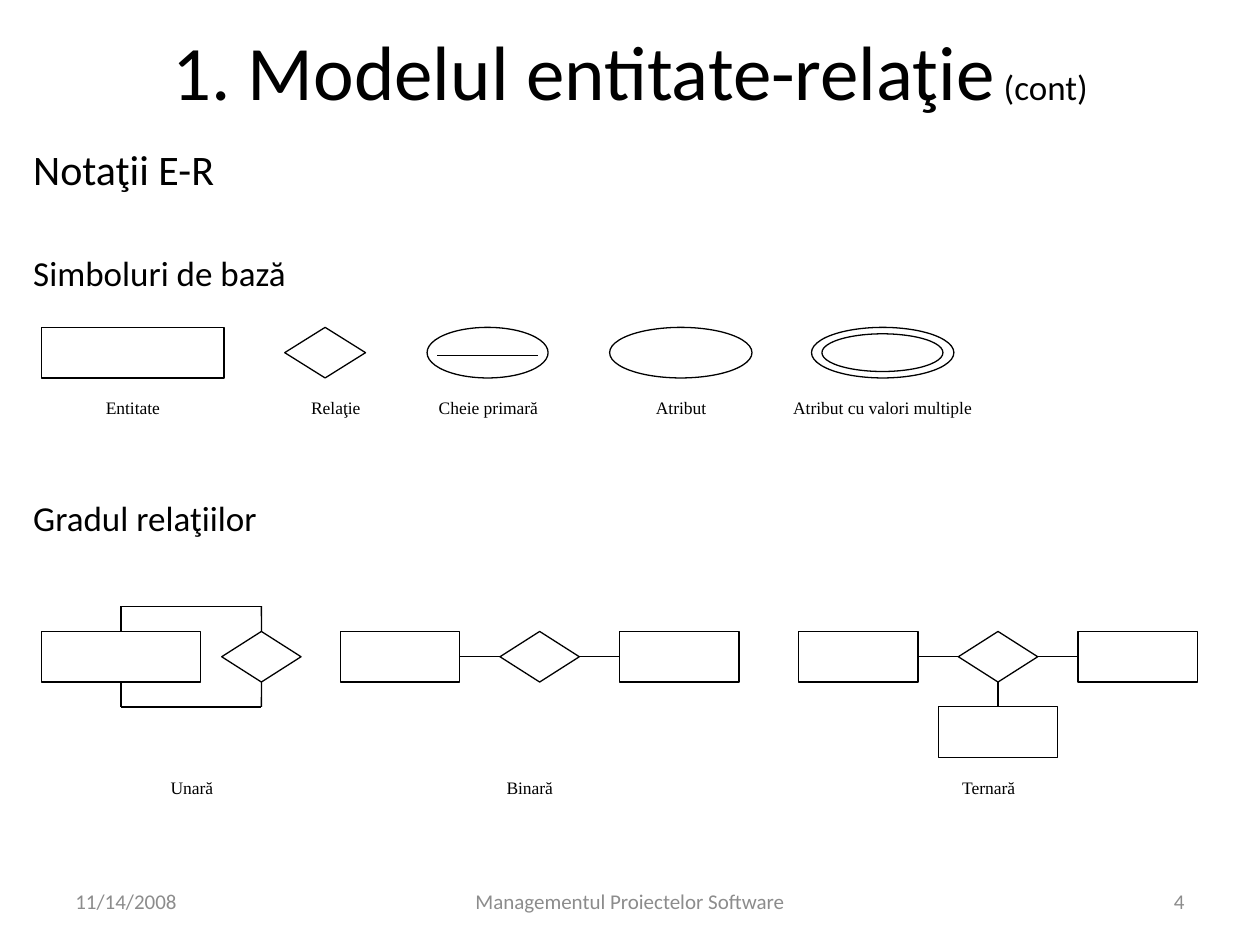
"""Build the slide on entity-relationship notation: basic symbols and relationship degrees."""
from dataclasses import dataclass

from lxml.etree import SubElement
from pptx import Presentation
from pptx.dml.color import RGBColor
from pptx.enum.shapes import MSO_CONNECTOR, MSO_SHAPE as SHAPE
from pptx.enum.text import MSO_ANCHOR as ANCHOR, MSO_AUTO_SIZE, PP_ALIGN as ALIGN
from pptx.oxml.ns import qn
from pptx.util import Cm, Pt


@dataclass(frozen=True)
class Theme:
    ink: RGBColor = RGBColor(0, 0, 0)
    paper: RGBColor = RGBColor(255, 255, 255)
    muted: RGBColor = RGBColor(0x8C, 0x8C, 0x8C)
    font: str = "Calibri"
    label_font: str = "Times New Roman"
    title: Pt = Pt(44)
    heading: Pt = Pt(24)
    body: Pt = Pt(20)
    footer: Pt = Pt(12)
    label: Pt = Pt(10)
    line: Pt = Pt(0.75)


theme = Theme()
prs = Presentation()
prs.slide_width, prs.slide_height = Cm(25.4), Cm(19.05)
s = prs.slides.add_slide(prs.slide_layouts[5])


def add_figure(kind, x, y, w, h, text=None):
    sp = s.shapes.add_shape(kind, Cm(x), Cm(y), Cm(w), Cm(h))
    sp.shadow.inherit = False
    sp.fill.solid()
    sp.fill.fore_color.rgb = theme.paper
    if text is None:
        sp.line.color.rgb = theme.ink
        sp.line.width = theme.line
        return sp
    sp.line.fill.background()
    tf = sp.text_frame
    tf.vertical_anchor = ANCHOR.TOP
    p = tf.paragraphs[0]
    p.text, p.alignment = text, ALIGN.CENTER
    p.font.name, p.font.size = theme.label_font, theme.label
    p.font.color.rgb = theme.ink
    return sp


def add_line(x1, y1, x2, y2, begin=None, end=None):
    line = s.shapes.add_connector(MSO_CONNECTOR.STRAIGHT, Cm(x1), Cm(y1), Cm(x2), Cm(y2))
    if begin:
        line.begin_connect(*begin)
    if end:
        line.end_connect(*end)
    line.line.color.rgb = theme.ink
    line.line.width = theme.line
    SubElement(line._element.spPr, qn("a:effectLst"))


title = s.shapes.title
title.left, title.top, title.width, title.height = Cm(0.42), Cm(0.42), Cm(24.56), Cm(2.54)
tf = title.text_frame
tf.auto_size = MSO_AUTO_SIZE.NONE
tf.vertical_anchor = ANCHOR.MIDDLE
p = tf.paragraphs[0]
p.alignment, p.line_spacing = ALIGN.CENTER, 0.6
for text, size in (("1. Modelul entitate-relaţie", theme.title), (" (cont)", theme.body)):
    r = p.add_run()
    r.text = text
    r.font.name, r.font.size = theme.font, size
    r.font.color.rgb = theme.ink

tf = s.shapes.add_textbox(Cm(0.42), Cm(2.77), Cm(24.56), Cm(14.17)).text_frame
tf.word_wrap = True
headings = (
    ("Notaţii E-R", theme.heading, 0),
    ("Simboluri de bază", theme.body, 33),
    ("Gradul relaţiilor", theme.body, 116),
)
for i, (text, size, gap) in enumerate(headings):
    p = tf.add_paragraph() if i else tf.paragraphs[0]
    p.text, p.space_before = text, Pt(gap)
    p.font.name, p.font.size = theme.font, size
    p.font.color.rgb = theme.ink

footers = (
    ("11/14/2008", 1.27, 5.93, ALIGN.LEFT),
    ("Managementul Proiectelor Software", 8.68, 8.04, ALIGN.CENTER),
    ("4", 18.2, 5.93, ALIGN.RIGHT),
)
for text, x, w, align in footers:
    tf = s.shapes.add_textbox(Cm(x), Cm(17.66), Cm(w), Cm(1.01)).text_frame
    tf.word_wrap, tf.vertical_anchor = True, ANCHOR.MIDDLE
    p = tf.paragraphs[0]
    p.text, p.alignment = text, align
    p.font.name, p.font.size = theme.font, theme.footer
    p.font.color.rgb = theme.muted

box_h, label_h = 1.02, 0.76
symbol_y, symbol_label_y = 6.6, 7.87
symbols = (
    (SHAPE.RECTANGLE, 0.84, 3.68, "Entitate", 0.84, 3.68),
    (SHAPE.DIAMOND, 5.74, 1.63, "Relaţie", 4.93, 3.68),
    (SHAPE.OVAL, 8.61, 2.44, "Cheie primară", 7.8, 4.09),
    (SHAPE.OVAL, 12.29, 2.87, "Atribut", 11.89, 3.68),
    (SHAPE.OVAL, 16.36, 2.87, "Atribut cu valori multiple", 15.54, 4.5),
)
for kind, x, w, text, label_x, label_w in symbols:
    add_figure(kind, x, symbol_y, w, box_h)
    add_figure(SHAPE.RECTANGLE, label_x, symbol_label_y, label_w, label_h, text)
add_line(8.81, 7.16, 10.85, 7.16)
add_figure(SHAPE.OVAL, 16.57, 6.73, 2.44, 0.76)

row_y, entity_w, diamond_w, gap = 12.73, 2.41, 1.6, 0.81
mid_y, bottom_y = row_y + box_h / 2, row_y + box_h
loop_top, loop_bottom = 12.22, 14.25

entity = add_figure(SHAPE.RECTANGLE, 0.84, row_y, 3.2, box_h)
diamond = add_figure(SHAPE.DIAMOND, 4.47, row_y, diamond_w, box_h)
entity_x, diamond_x = 2.44, 5.27
for site, edge_y, loop_y in ((0, row_y, loop_top), (2, bottom_y, loop_bottom)):
    add_line(entity_x, edge_y, entity_x, loop_y, begin=(entity, site))
    add_line(entity_x, loop_y, diamond_x, loop_y)
    add_line(diamond_x, loop_y, diamond_x, edge_y, end=(diamond, site))

for x, ternary in ((6.86, False), (16.1, True)):
    diamond_x = x + entity_w + gap
    right_x = diamond_x + diamond_w + gap
    left = add_figure(SHAPE.RECTANGLE, x, row_y, entity_w, box_h)
    diamond = add_figure(SHAPE.DIAMOND, diamond_x, row_y, diamond_w, box_h)
    right = add_figure(SHAPE.RECTANGLE, right_x, row_y, entity_w, box_h)
    add_line(x + entity_w, mid_y, diamond_x, mid_y, (left, 3), (diamond, 1))
    add_line(diamond_x + diamond_w, mid_y, right_x, mid_y, (diamond, 3), (right, 1))
    if ternary:
        centre_x = diamond_x + diamond_w / 2
        third = add_figure(SHAPE.RECTANGLE, centre_x - entity_w / 2, loop_bottom, entity_w, box_h)
        add_line(centre_x, bottom_y, centre_x, loop_bottom, (diamond, 2), (third, 0))

for text, x in (("Unară", 2.46), ("Binară", 9.27), ("Ternară", 18.52)):
    add_figure(SHAPE.RECTANGLE, x, 15.53, 2.82, label_h, text)

prs.save("out.pptx")
